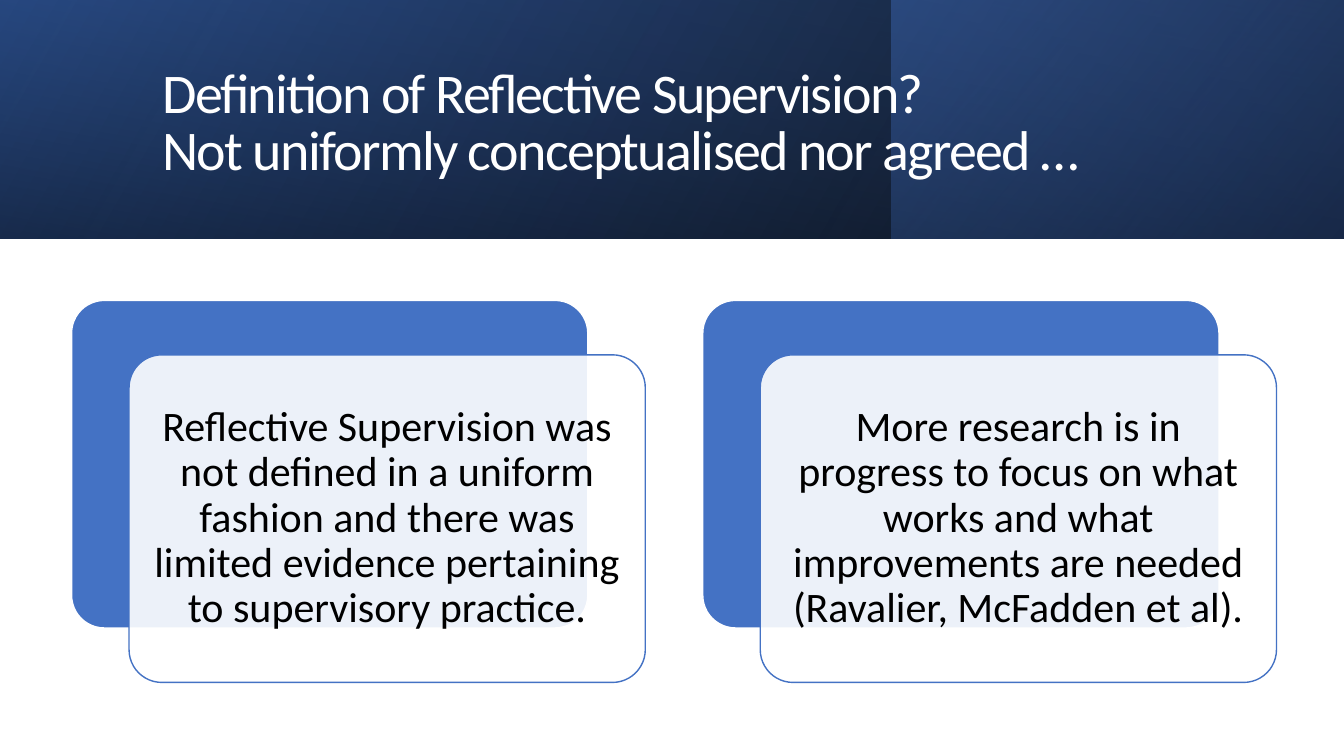
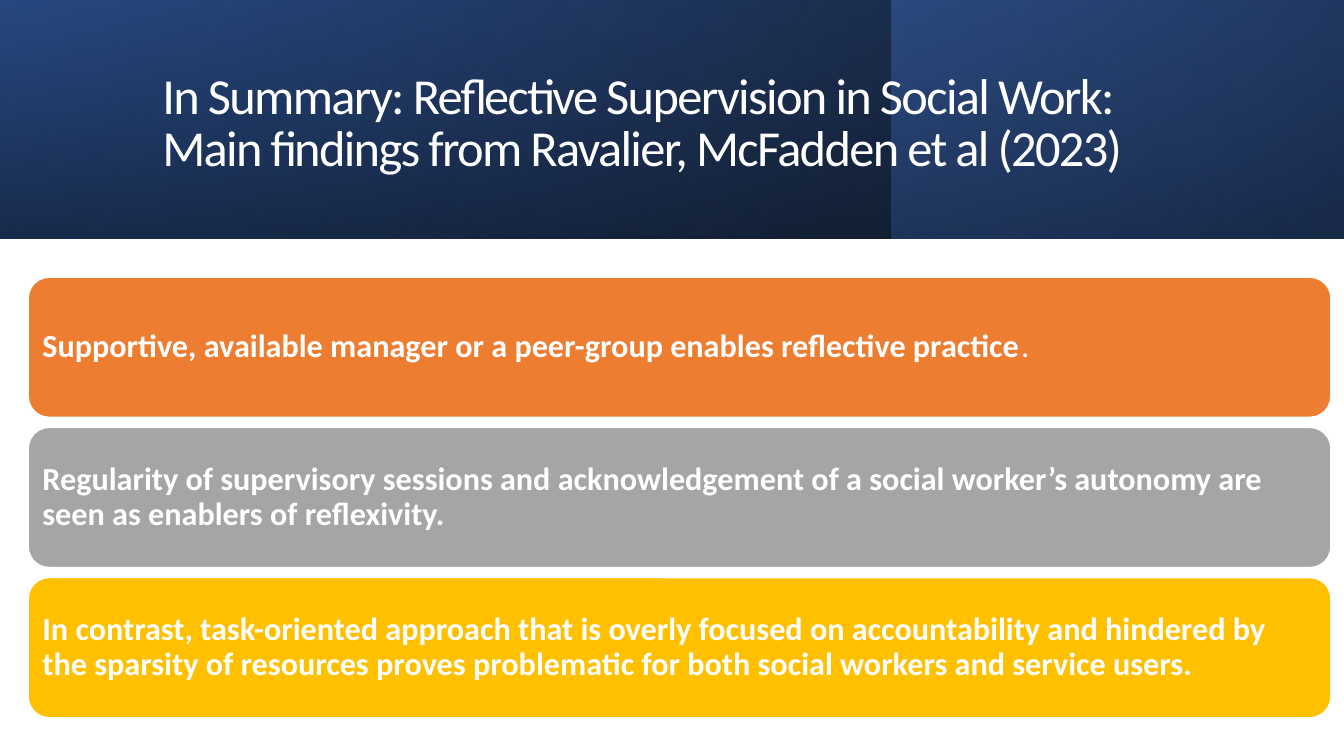
from dataclasses import dataclass

from lxml.etree import SubElement
from pptx import Presentation
from pptx.dml.color import RGBColor
from pptx.enum.shapes import MSO_SHAPE
from pptx.enum.text import MSO_ANCHOR, MSO_AUTO_SIZE, PP_ALIGN
from pptx.oxml.ns import qn
from pptx.shapes.autoshape import Shape
from pptx.slide import Slide
from pptx.text.text import _Paragraph
from pptx.util import Inches, Pt

FONT = "Calibri"
WHITE = RGBColor(0xFF, 0xFF, 0xFF)
BLACK = RGBColor(0x00, 0x00, 0x00)
NAVY = RGBColor(0x20, 0x38, 0x64)
DEEP_BLUE = RGBColor(0x2F, 0x55, 0x97)
BLUE = RGBColor(0x44, 0x72, 0xC4)
ORANGE = RGBColor(0xED, 0x7D, 0x31)
GREY = RGBColor(0xA5, 0xA5, 0xA5)
GOLD = RGBColor(0xFF, 0xC0, 0x00)

SLIDE_WIDTH, SLIDE_HEIGHT = 13.33, 7.5
BAND_HEIGHT = 2.37
BAND_MIDDLE = (SLIDE_WIDTH - BAND_HEIGHT) / 2


@dataclass(frozen=True)
class Box:
    """Position and size in inches."""

    left: float
    top: float
    width: float
    height: float


@dataclass(frozen=True)
class Band:
    """A mirrored gradient layer of the header; stops are colour and opacity."""

    box: Box
    stops: tuple[tuple[RGBColor, int], ...]
    angle: int
    rotation: int = 0


@dataclass(frozen=True)
class Finding:
    """A coloured bar and its text runs, each with its bold flag."""

    color: RGBColor
    runs: tuple[tuple[str, bool], ...]


BANDS = (
    Band(Box(0, 0, SLIDE_WIDTH, BAND_HEIGHT), ((BLACK, 96), (DEEP_BLUE, 100)), 30),
    Band(Box(8.84, 0, 4.48, BAND_HEIGHT), ((NAVY, 68), (BLUE, 48)), 40),
    Band(Box(BAND_MIDDLE, -BAND_MIDDLE, BAND_HEIGHT, SLIDE_WIDTH),
         ((DEEP_BLUE, 16), (BLACK, 45)), 10, 270),
)

DEFINITIONS = (
    "Reflective Supervision was not defined in a uniform fashion and there was "
    "limited evidence pertaining to supervisory practice.",
    "More research is in progress to focus on what works and what improvements "
    "are needed (Ravalier, McFadden et al).",
)

FINDINGS = (
    Finding(ORANGE, (
        ("Supportive, available manager or a peer-group enables reflective practice", True),
        (".", False))),
    Finding(GREY, ((
        "Regularity of supervisory sessions and acknowledgement of a social worker’s "
        "autonomy are seen as enablers of reflexivity.", True),)),
    Finding(GOLD, ((
        "In contrast, task-oriented approach that is overly focused on accountability "
        "and hindered by the sparsity of resources proves problematic for both social "
        "workers and service users.", True),)),
)


def add_box(slide: Slide, preset: MSO_SHAPE, box: Box) -> Shape:
    """Add a preset shape without shadow."""
    shape = slide.shapes.add_shape(preset, Inches(box.left), Inches(box.top),
                                   Inches(box.width), Inches(box.height))
    shape.shadow.inherit = False
    return shape


def set_opacity(shape: Shape, percents: tuple[int, ...]) -> None:
    """Set the opacity of the fill colours in order."""
    for color, percent in zip(shape.element.spPr.iter(qn("a:srgbClr")), percents):
        SubElement(color, qn("a:alpha")).set("val", str(percent * 1000))


def add_band(slide: Slide, band: Band) -> None:
    """Draw one gradient layer of the header."""
    shape = add_box(slide, MSO_SHAPE.RECTANGLE, band.box)
    shape.rotation = band.rotation
    shape.element.spPr.find(qn("a:xfrm")).set("flipH", "1")
    shape.line.fill.background()
    shape.fill.gradient()
    shape.fill.gradient_angle = band.angle
    for stop, (color, _) in zip(shape.fill.gradient_stops, band.stops):
        stop.color.rgb = color
    set_opacity(shape, tuple(opacity for _, opacity in band.stops))


def add_run(paragraph: _Paragraph, text: str, size: float, color: RGBColor,
            bold: bool = False, spacing: float = 0) -> None:
    """Append a formatted run with letter spacing in points."""
    run = paragraph.add_run()
    run.text = text
    run.font.name = FONT
    run.font.size = Pt(size)
    run.font.bold = bold
    run.font.color.rgb = color
    if spacing:
        run.font._element.set("spc", str(round(spacing * 100)))


def add_titled_slide(deck: Presentation, lines: tuple[str, ...], size: float) -> Slide:
    """Add a slide with the header bands and a title over them."""
    slide = deck.slides.add_slide(deck.slide_layouts[5])
    for band in BANDS:
        add_band(slide, band)
    title = slide.shapes.title
    slide.shapes._spTree.append(title.element)
    title.left, title.top = Inches(1.51), Inches(0.38)
    title.width, title.height = Inches(10.63), Inches(1.72)
    frame = title.text_frame
    frame.word_wrap = True
    frame.auto_size = MSO_AUTO_SIZE.NONE
    frame.vertical_anchor = MSO_ANCHOR.MIDDLE
    paragraph = frame.paragraphs[0]
    paragraph.alignment = PP_ALIGN.LEFT
    paragraph.line_spacing = 0.85
    for index, line in enumerate(lines):
        if index:
            paragraph.add_line_break()
        add_run(paragraph, line, size, WHITE, spacing=-1.2)
    return slide


def add_card(slide: Slide, box: Box, fill: RGBColor, line: RGBColor, rounding: float) -> Shape:
    """Add a rounded card with a thin outline."""
    card = add_box(slide, MSO_SHAPE.ROUNDED_RECTANGLE, box)
    card.adjustments[0] = rounding
    card.fill.solid()
    card.fill.fore_color.rgb = fill
    card.line.color.rgb = line
    card.line.width = Pt(1)
    return card


def card_paragraph(card: Shape, inset: float, align: PP_ALIGN) -> _Paragraph:
    """Prepare the text frame of a card and return its paragraph."""
    frame = card.text_frame
    frame.word_wrap = True
    frame.vertical_anchor = MSO_ANCHOR.MIDDLE
    frame.margin_left = frame.margin_right = Inches(inset)
    frame.margin_top = frame.margin_bottom = Inches(inset)
    paragraph = frame.paragraphs[0]
    paragraph.alignment = align
    paragraph.line_spacing = 0.9
    return paragraph


def add_definition(slide: Slide, index: int, text: str) -> None:
    """Draw a blue card with a translucent text card in front."""
    left, top, width, height = 0.71 + index * 6.26, 2.98, 5.12, 3.25
    add_card(slide, Box(left, top, width, height), BLUE, WHITE, 0.1)
    front = add_card(slide, Box(left + 0.57, top + 0.54, width, height), WHITE, BLUE, 0.1)
    set_opacity(front, (90,))
    add_run(card_paragraph(front, 0.12, PP_ALIGN.CENTER), text, 30, BLACK)


def add_finding(slide: Slide, index: int, finding: Finding) -> None:
    """Draw one full-width finding bar."""
    bar = add_card(slide, Box(0.28, 2.75 + index * 1.49, 12.92, 1.39),
                   finding.color, WHITE, 0.15)
    paragraph = card_paragraph(bar, 0.08, PP_ALIGN.LEFT)
    for text, bold in finding.runs:
        add_run(paragraph, text, 23, WHITE, bold)


def main() -> None:
    """Build and save the deck."""
    deck = Presentation()
    deck.slide_width, deck.slide_height = Inches(SLIDE_WIDTH), Inches(SLIDE_HEIGHT)

    definition_slide = add_titled_slide(deck, (
        "Definition of Reflective Supervision?",
        "Not uniformly conceptualised nor agreed …"), 40)
    for index, text in enumerate(DEFINITIONS):
        add_definition(definition_slide, index, text)

    summary_slide = add_titled_slide(deck, (
        "In Summary: Reflective Supervision in Social Work:",
        "Main findings from Ravalier, McFadden et al (2023)"), 36)
    for index, finding in enumerate(FINDINGS):
        add_finding(summary_slide, index, finding)

    deck.save("out.pptx")


if __name__ == "__main__":
    main()
